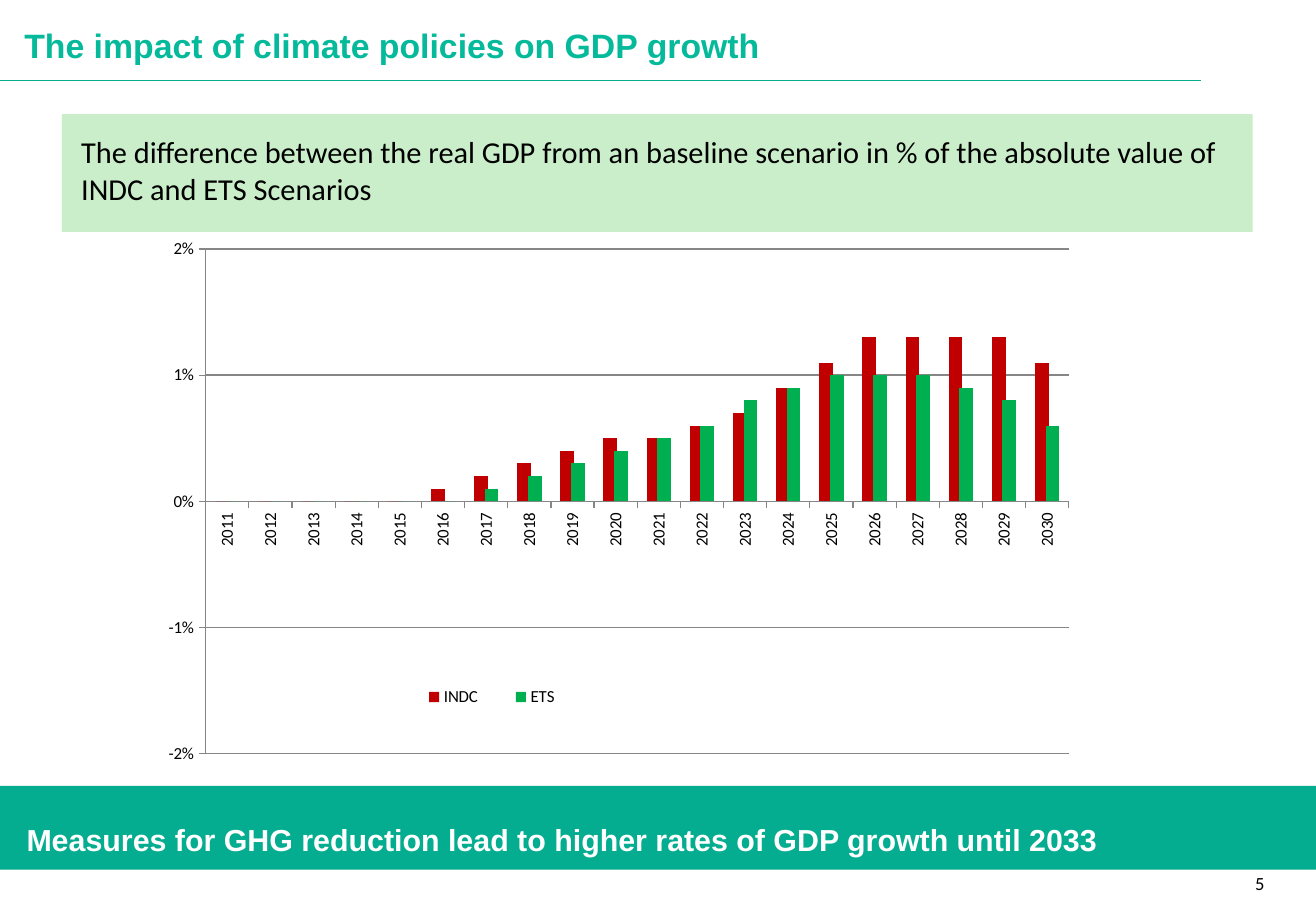
from lxml import etree
from pptx import Presentation
from pptx.chart.data import CategoryChartData
from pptx.dml.color import RGBColor
from pptx.enum.chart import XL_CHART_TYPE, XL_LEGEND_POSITION, XL_TICK_MARK
from pptx.enum.shapes import MSO_CONNECTOR, MSO_SHAPE
from pptx.enum.text import MSO_ANCHOR, PP_ALIGN
from pptx.oxml import parse_xml
from pptx.oxml.ns import nsdecls, qn
from pptx.util import Inches, Pt

COLUMN = XL_CHART_TYPE.COLUMN_CLUSTERED
RIGHT = XL_LEGEND_POSITION.RIGHT
OUTSIDE = XL_TICK_MARK.OUTSIDE
RECT = MSO_SHAPE.RECTANGLE
STRAIGHT = MSO_CONNECTOR.STRAIGHT
BOTTOM = MSO_ANCHOR.BOTTOM
LEFT = PP_ALIGN.LEFT

BLACK = RGBColor(0x00, 0x00, 0x00)
WHITE = RGBColor(0xFF, 0xFF, 0xFF)
GREY = RGBColor(0x86, 0x86, 0x86)
TEAL = RGBColor(0x04, 0xAC, 0x90)
MINT = RGBColor(0x05, 0xB9, 0x9B)
PALE = RGBColor(0xCA, 0xEE, 0xCA)
RED = RGBColor(0xC0, 0x00, 0x00)
GREEN = RGBColor(0x00, 0xB0, 0x50)


def write(box, text, size, face, color, bold=False, inset=True):
    frame = box.text_frame
    frame.word_wrap = True
    if not inset:
        for side in ("left", "top", "right", "bottom"):
            setattr(frame, f"margin_{side}", 0)
    par = frame.paragraphs[0]
    par.text = text
    par.alignment = LEFT
    font = par.runs[0].font
    looks = {"size": Pt(size), "name": face, "bold": bold}
    for key, value in looks.items():
        setattr(font, key, value)
    font.color.rgb = color
    return par


def place(parent, spot, inner=False):
    """Give a chart part a manual layout, in shares of the chart area."""
    for old in parent.findall(qn("c:layout")):
        parent.remove(old)
    target = '<c:layoutTarget val="inner"/>' if inner else ""
    modes = '<c:xMode val="edge"/><c:yMode val="edge"/>'
    sizes = "".join(f'<c:{k} val="{v}"/>' for k, v in zip("xywh", spot))
    return parse_xml(
        f'<c:layout {nsdecls("c")}><c:manualLayout>{target}{modes}{sizes}'
        "</c:manualLayout></c:layout>")


prs = Presentation()
prs.slide_width, prs.slide_height = Inches(10.83), Inches(7.5)
slide = prs.slides.add_slide(prs.slide_layouts[5])
shapes = slide.shapes

# Title
title = shapes.title
title.left, title.top = Inches(0.2), Inches(0.24)
title.width, title.height = Inches(9.23), Inches(0.3)
par = write(title, "The impact of climate policies on GDP growth",
            20, "Arial", MINT, bold=True, inset=False)
par.line_spacing = 0.9
title.text_frame.vertical_anchor = BOTTOM

# Bands behind the texts
bands = [
    (0.51, 0.94, 9.8, 0.97, PALE),
    (-0.06, 6.47, 10.9, 0.69, TEAL),
]
for *spot, color in bands:
    band = shapes.add_shape(RECT, *map(Inches, spot))
    band.shadow.inherit = False
    band.fill.solid()
    band.fill.fore_color.rgb = color
    band.line.fill.background()

# Texts
texts = [
    (0.57, 1.05, 9.74, 0.71,
     "Тhe difference between the real GDP from an baseline scenario in % "
     "of the absolute value of INDC and ETS Scenarios",
     18, "Calibri", BLACK, False, True),
    (0.12, 6.71, 10.63, 0.4,
     "Measures for GHG reduction lead to higher rates of GDP growth until 2033",
     18, "Arial", WHITE, True, True),
    (10.33, 7.18, 0.24, 0.17, "5", 11, "Calibri", BLACK, False, False),
]
for x, y, w, h, *look in texts:
    write(shapes.add_textbox(*map(Inches, (x, y, w, h))), *look)

# Rule under the title
rule = shapes.add_connector(
    STRAIGHT, Inches(0), Inches(0.66), Inches(9.88), Inches(0.66))
rule.line.color.rgb = TEAL
rule.line.width = Pt(0.75)
etree.SubElement(rule._element.spPr, qn("a:effectLst"))

# Chart
series = [
    ("INDC", RED, [0, 0, 0, 0, 0, 0.001, 0.002, 0.003, 0.004, 0.005, 0.005,
                   0.006, 0.007, 0.009, 0.011, 0.013, 0.013, 0.013, 0.013,
                   0.011]),
    ("ETS", GREEN, [0, 0, 0, 0, 0, 0, 0.001, 0.002, 0.003, 0.004, 0.005,
                    0.006, 0.008, 0.009, 0.01, 0.01, 0.01, 0.009, 0.008,
                    0.006]),
]
data = CategoryChartData(number_format="0%")
data.categories = [str(year) for year in range(2011, 2031)]
for name, _, values in series:
    data.add_series(name, values)
chart = shapes.add_chart(
    COLUMN, Inches(1.28), Inches(1.91), Inches(8.26), Inches(4.67), data).chart
chart.has_title = False
chart.font.size = Pt(10)
chart.font.name = "Calibri"
chart.font.color.rgb = BLACK

plot = chart.plots[0]
plot.vary_by_categories = False
plot.gap_width, plot.overlap = 136, 23
for bars, (_, color, _) in zip(plot.series, series):
    bars.invert_if_negative = False
    bars.format.fill.solid()
    bars.format.fill.fore_color.rgb = color

years, share = chart.category_axis, chart.value_axis
scale = {"minimum_scale": -0.02, "maximum_scale": 0.02, "major_unit": 0.01,
         "has_major_gridlines": True}
for key, value in scale.items():
    setattr(share, key, value)
share.tick_labels.number_format = "0%"
share.tick_labels.number_format_is_linked = False
for axis in (years, share):
    axis.major_tick_mark = OUTSIDE
for part in (years, share, share.major_gridlines):
    part.format.line.color.rgb = GREY
    part.format.line.width = Pt(0.75)
turn = years.tick_labels.font._element.getparent().getparent().getparent()
turn.find(qn("a:bodyPr")).set("rot", "-5400000")

chart.has_legend = True
legend = chart.legend
legend.position = RIGHT
legend.include_in_layout = False
key = legend._element
key.find(qn("c:legendPos")).addnext(place(key, (0.24, 0.79, 0.19, 0.06)))
area = plot._element.getparent()
area.insert(0, place(area, (0.05, 0.03, 0.86, 0.89), inner=True))

prs.save("out.pptx")
